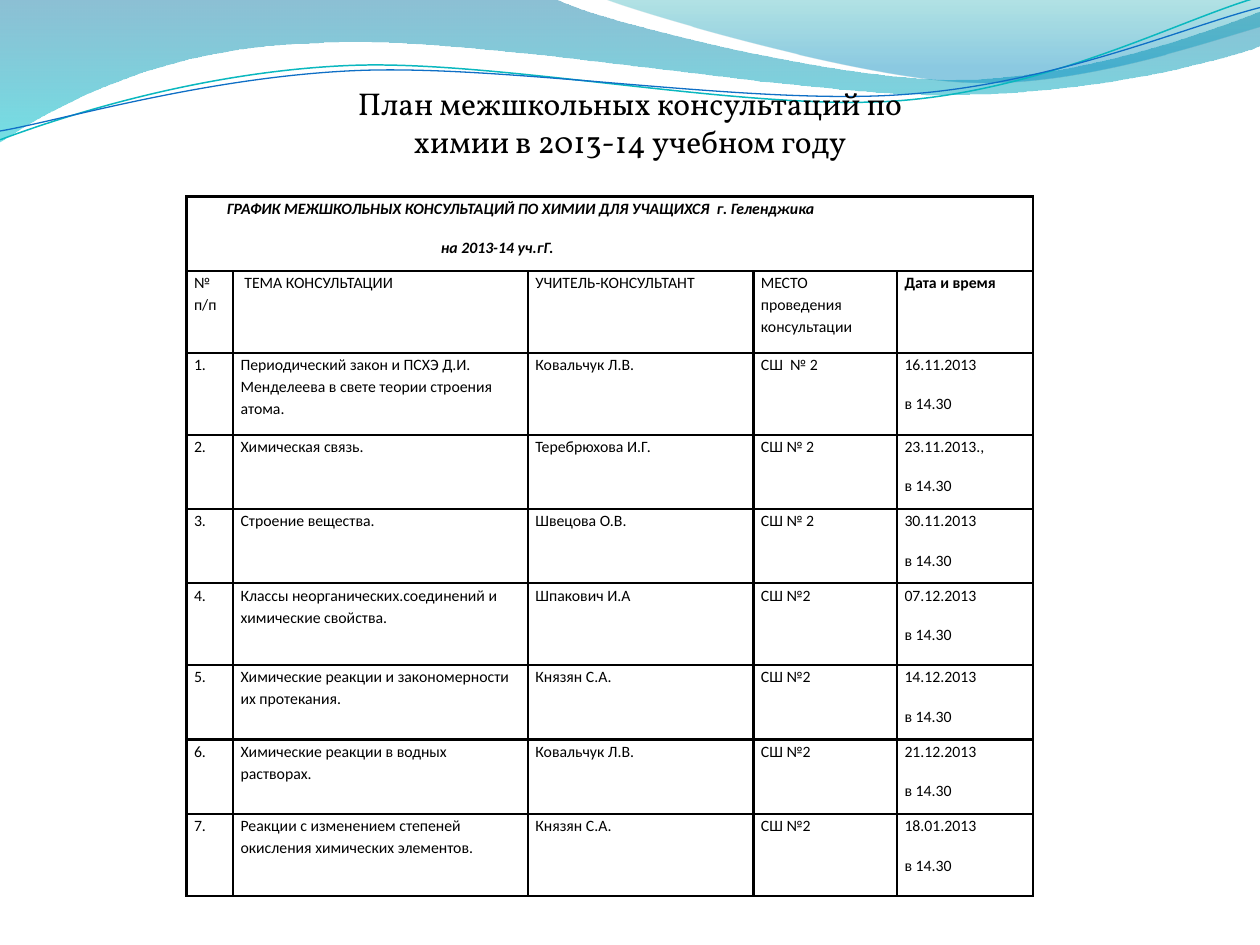
import math

from lxml import etree
from pptx import Presentation, util as u
from pptx.dml.color import RGBColor
from pptx.enum import text
from pptx.oxml import parse_xml
from pptx.oxml.ns import nsdecls, qn

Inches, Pt = u.Inches, u.Pt

COLORS = {
    "ink": "000000", "deep": "0074A1", "cyan": "00C6CF", "teal": "00A1A9",
    "sky": "008BBF", "line_teal": "0AB8BF", "line_blue": "0F6FC6",
}

# A segment of two numbers is a straight line, of six a cubic curve.
BANDS = [
    ((0, 0), [(4.4, -0.01), (4.76, 0.17, 6.64, 0.63, 7.58, 0.63),
              (8.53, 0.63, 9.58, 0.26, 10, 0.09), (10.01, 0.36),
              (9.83, 0.44, 8.7, 0.76, 7.46, 0.75),
              (6.22, 0.75, 3.82, 0.28, 2.57, 0.34),
              (1.29, 0.36, 0.46, 0.83, -0.01, 1.13)],
     [(0, "deep", 45), (100, "cyan", 55)]),
    ((4.79, -0.01), [(5.09, 0.11, 6.82, 0.62, 7.69, 0.65),
                     (8.56, 0.69, 9.61, 0.32, 10, 0.21), (10, 0)],
     [(0, "teal", 30), (80, "sky", 45)]),
]
STRANDS = [
    ((0, 1.11), [(0.48, 0.93, 1.58, 0.57, 2.77, 0.52),
                 (3.95, 0.47, 5.93, 0.89, 7.13, 0.8),
                 (8.33, 0.71, 9.38, 0.15, 9.98, -0.02)], "line_teal", 0.85),
    ((0, 1.04), [(0.47, 0.96, 1.64, 0.61, 2.83, 0.56),
                 (4.03, 0.51, 5.97, 0.84, 7.17, 0.75),
                 (8.36, 0.67, 9.41, 0.21, 10, 0.06)], "line_blue", 0.75),
]
STRAND_TILT = 357.3
STRAND_CENTER = (4.99, 0.58)

TITLE = "План межшкольных консультаций по химии в 2013-14 учебном году"
# Each caption line with its indent in inches.
CAPTION = [("ГРАФИК МЕЖШКОЛЬНЫХ КОНСУЛЬТАЦИЙ ПО ХИМИИ ДЛЯ УЧАЩИХСЯ  г. Геленджика", 0.26),
           ("на 2013-14 уч.гГ.", 1.96)]
HEADINGS = ["№ п/п", "ТЕМА КОНСУЛЬТАЦИИ", "УЧИТЕЛЬ-КОНСУЛЬТАНТ",
            "МЕСТО проведения консультации", "Дата и время"]
SESSIONS = [
    ("Периодический закон и ПСХЭ Д.И. Менделеева в свете теории строения атома.",
     "Ковальчук Л.В.", "СШ  № 2", "16.11.2013"),
    ("Химическая связь.", "Теребрюхова И.Г.", "СШ № 2", "23.11.2013.,"),
    ("Строение вещества.", "Швецова О.В.", "СШ № 2", "30.11.2013"),
    ("Классы неорганических.соединений и химические свойства.",
     "Шпакович И.А", "СШ №2", "07.12.2013"),
    ("Химические реакции и закономерности их протекания.",
     "Князян С.А.", "СШ №2", "14.12.2013"),
    ("Химические реакции в водных растворах.",
     "Ковальчук Л.В.", "СШ №2", "21.12.2013"),
    ("Реакции с изменением степеней окисления химических элементов.",
     "Князян С.А.", "СШ №2", "18.01.2013"),
]
TIME = "в 14.30"
COL_WIDTHS = [0.37, 2.34, 1.79, 1.14, 1.08]
ROW_HEIGHTS = [0.59, 0.65, 0.65, 0.59, 0.59, 0.65, 0.59, 0.59, 0.65]


def rgb(name):
    return RGBColor.from_string(COLORS[name])


def pairs(seg):
    return list(zip(seg[::2], seg[1::2]))


def level(points):
    """Undo the strand tilt, which the shape's rotation puts back."""
    angle = math.radians(360 - STRAND_TILT)
    cos, sin = math.cos(angle), math.sin(angle)
    cx, cy = STRAND_CENTER
    return [(cx + (x - cx) * cos - (y - cy) * sin,
             cy + (x - cx) * sin + (y - cy) * cos) for x, y in points]


def add_outline(s, left, top, start, segments, close):
    """Draw an outline through the segment ends, then bend the curved ones."""
    def place(points):
        return [(left + Inches(x), top + Inches(y)) for x, y in points]

    segments = [place(seg) for seg in segments]
    builder = s.shapes.build_freeform(*place([start])[0])
    builder.add_line_segments([seg[-1] for seg in segments], close=close)
    sp = builder.convert_to_shape()
    lines = list(sp._element.iter(qn("a:lnTo")))
    for line, seg in zip(lines, segments):
        if len(seg) == 3:
            curve = etree.Element(qn("a:cubicBezTo"))
            for x, y in seg:
                etree.SubElement(curve, qn("a:pt"), x=str(x - sp.left), y=str(y - sp.top))
            line.getparent().replace(line, curve)
    sp.shadow.inherit = False
    sp.fill.background()
    return sp


def fill_gradient(sp, stops):
    """Fill from top to bottom with (position, colour, opacity) stops."""
    stop_xml = "".join(
        f'<a:gs pos="{pos * 1000}"><a:srgbClr val="{COLORS[name]}">'
        f'<a:alpha val="{opacity * 1000}"/></a:srgbClr></a:gs>'
        for pos, name, opacity in stops)
    grad = parse_xml(f'<a:gradFill {nsdecls("a")} rotWithShape="1"><a:gsLst>{stop_xml}'
                     '</a:gsLst><a:lin ang="5400000" scaled="0"/></a:gradFill>')
    props = sp._element.spPr
    props.replace(props.find(qn("a:noFill")), grad)


def add_waves(s, left, top):
    for start, segments, stops in BANDS:
        sp = add_outline(s, left, top, start, [pairs(seg) for seg in segments], True)
        fill_gradient(sp, stops)
        sp.line.fill.background()
    for start, segments, color, width in STRANDS:
        sp = add_outline(s, left, top, level([start])[0],
                         [level(pairs(seg)) for seg in segments], False)
        sp.rotation = STRAND_TILT
        sp.line.color.rgb = rgb(color)
        sp.line.width = Pt(width)


def add_title(s, left, top, width, height):
    tf = s.shapes.add_textbox(left, top, width, height).text_frame
    tf.word_wrap = True
    tf.auto_size = text.MSO_AUTO_SIZE.SHAPE_TO_FIT_TEXT
    p = tf.paragraphs[0]
    p.text = TITLE
    p.alignment = text.PP_ALIGN.CENTER
    p.font.size, p.font.name = Pt(18), "Vollkorn"
    p.font.color.rgb = rgb("ink")


def set_borders(cell, widths):
    """Draw the left, right, top and bottom borders, widths in points."""
    props = cell._tc.get_or_add_tcPr()
    for i, (side, width) in enumerate(zip("LRTB", widths)):
        ln = etree.Element(qn(f"a:ln{side}"), w=str(Pt(width)))
        fill = etree.SubElement(ln, qn("a:solidFill"))
        etree.SubElement(fill, qn("a:srgbClr"), val=COLORS["ink"])
        props.insert(i, ln)


def write_cell(cell, lines, bold=False, italic=False):
    """Write (wording, indent) lines, one paragraph each."""
    tf = cell.text_frame
    for i, (wording, indent) in enumerate(lines):
        p = tf.add_paragraph() if i else tf.paragraphs[0]
        p.text = wording
        p.line_spacing, p.space_after = 1.15, Pt(10)
        p.font.size, p.font.name = Pt(9), "Calibri"
        p.font.bold, p.font.italic = bold, italic
        p.font.color.rgb = rgb("ink")
        if indent:
            p._p.get_or_add_pPr().set("marL", str(Inches(indent)))


def add_schedule(s, left, top):
    frame = s.shapes.add_table(len(ROW_HEIGHTS), len(COL_WIDTHS), left, top,
                               Inches(sum(COL_WIDTHS)), Inches(sum(ROW_HEIGHTS)))
    table = frame.table
    table.first_row = table.horz_banding = False
    for col, width in zip(table.columns, COL_WIDTHS):
        col.width = Inches(width)
    for row, height in zip(table.rows, ROW_HEIGHTS):
        row.height = Inches(height)

    borders = {0: (1.5, 1, 1.5, 1), 1: (1.5, 1.5, 1, 1.5)}
    for r, row in enumerate(table.rows):
        for cell in row.cells:
            cell.margin_left = cell.margin_right = Inches(0.06)
            cell.margin_top = cell.margin_bottom = 0
            cell.fill.background()
            set_borders(cell, borders.get(r, (1.5,) * 4))

    table.cell(0, 0).merge(table.cell(0, len(COL_WIDTHS) - 1))
    write_cell(table.cell(0, 0), CAPTION, bold=True, italic=True)
    for c, heading in enumerate(HEADINGS):
        write_cell(table.cell(1, c), [(heading, 0.03 if c == 1 else 0)],
                   bold=c == len(HEADINGS) - 1)
    for n, (topic, teacher, place, date) in enumerate(SESSIONS, 1):
        entries = [[f"{n}."], [topic], [teacher], [place], [date, TIME]]
        for c, lines in enumerate(entries):
            write_cell(table.cell(n + 1, c), [(line, 0) for line in lines])


def main():
    prs = Presentation()
    prs.slide_width, prs.slide_height = Inches(10), Inches(7.5)
    s = prs.slides.add_slide(prs.slide_layouts[6])
    add_waves(s, 0, 0)
    add_title(s, Inches(2.42), Inches(0.62), Inches(5.16), Inches(0.71))
    add_schedule(s, Inches(1.48), Inches(1.56))
    prs.save("out.pptx")


if __name__ == "__main__":
    main()
